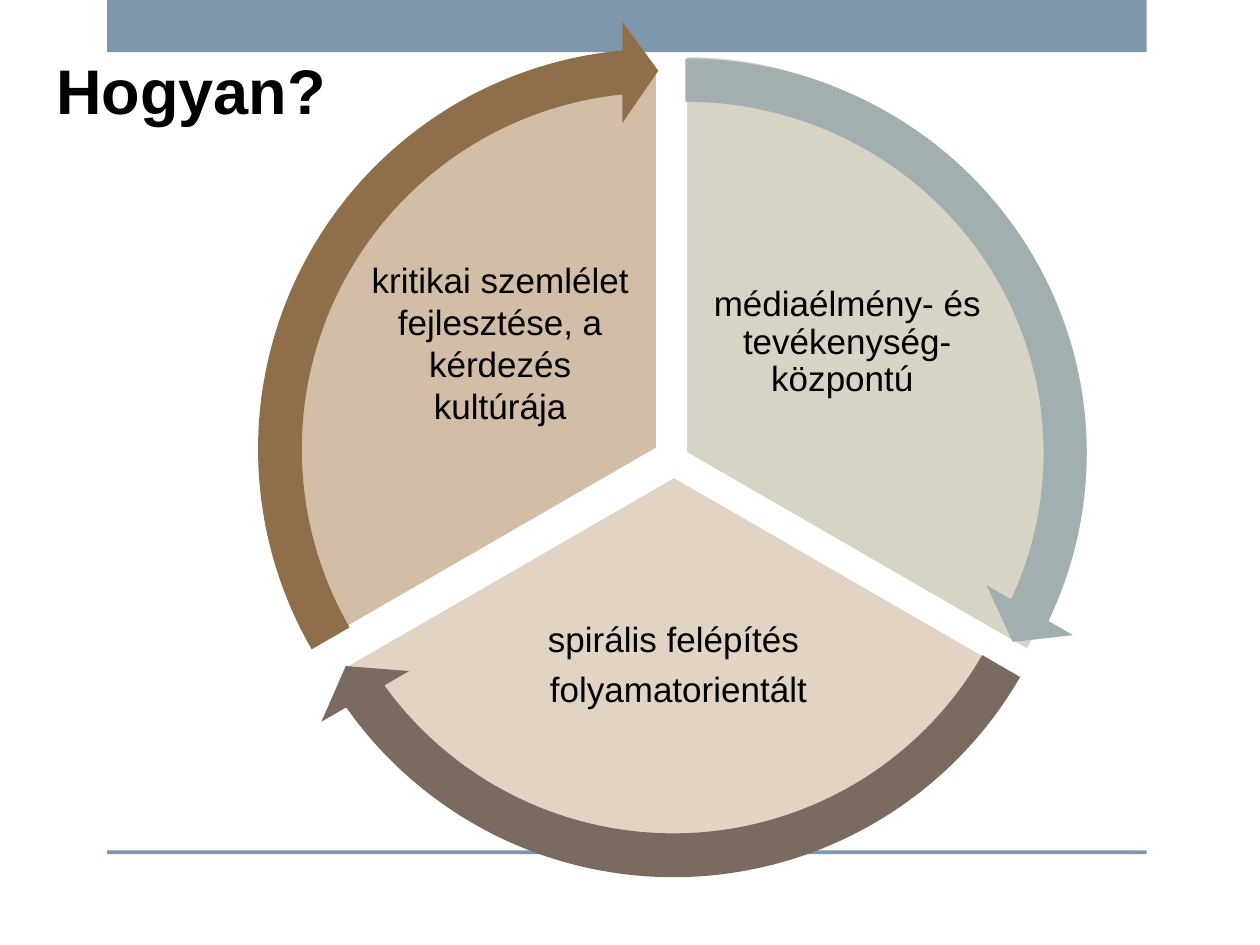
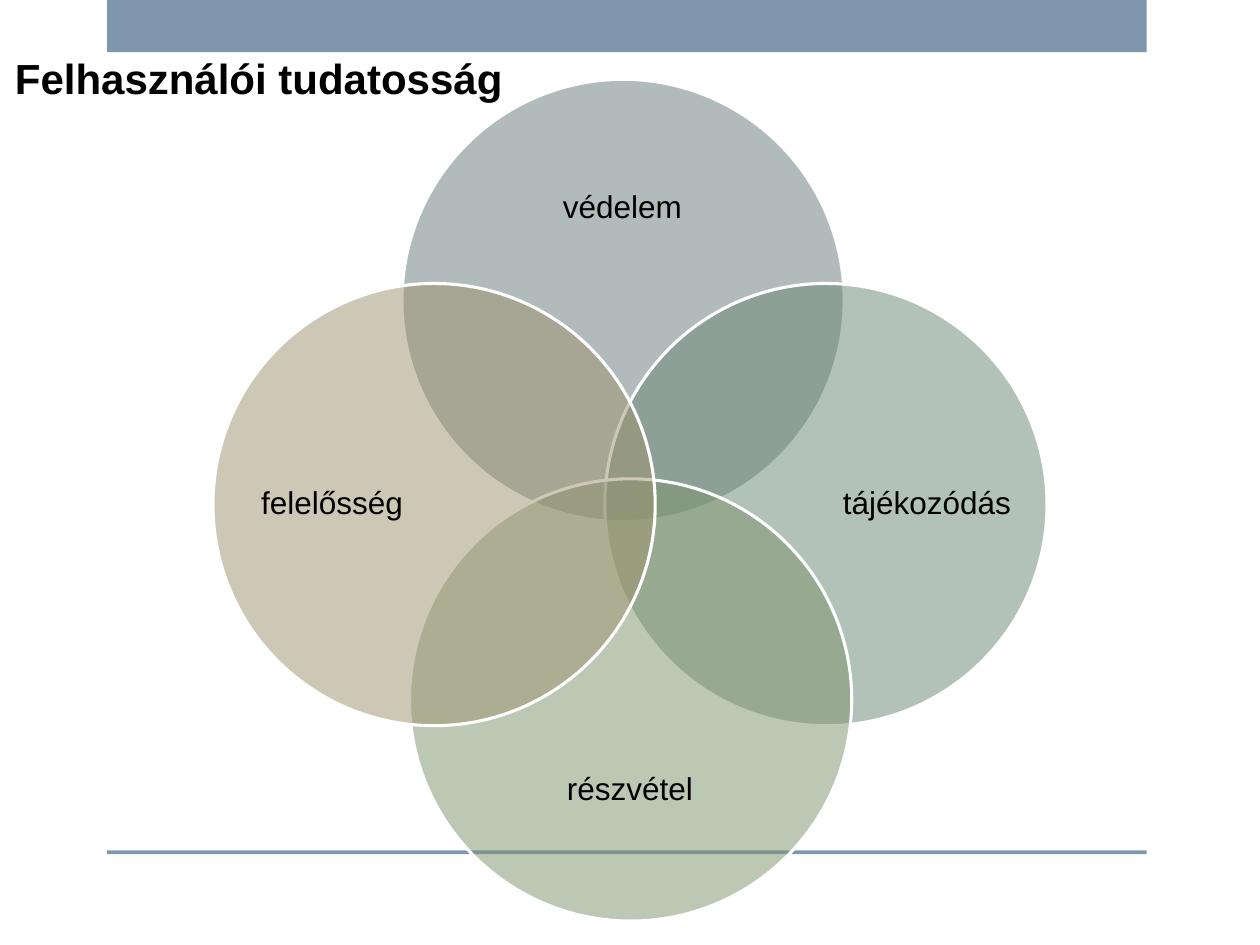
from lxml import etree
from pptx import Presentation
from pptx.dml.color import RGBColor
from pptx.enum.shapes import MSO_SHAPE
from pptx.enum.text import MSO_ANCHOR, MSO_AUTO_SIZE, PP_ALIGN
from pptx.oxml.ns import qn
from pptx.util import Inches, Pt

RECT, PIE = MSO_SHAPE.RECTANGLE, MSO_SHAPE.PIE
OVAL, ARC_ARROW = MSO_SHAPE.OVAL, MSO_SHAPE.CIRCULAR_ARROW
LEFT, CENTER = PP_ALIGN.LEFT, PP_ALIGN.CENTER
MIDDLE, TOP = MSO_ANCHOR.MIDDLE, MSO_ANCHOR.TOP
FIT_SHAPE = MSO_AUTO_SIZE.SHAPE_TO_FIT_TEXT

BLACK = RGBColor(0x00, 0x00, 0x00)
WHITE = RGBColor(0xFF, 0xFF, 0xFF)
BAND_BLUE = RGBColor(0x7E, 0x97, 0xAD)
SAND = RGBColor(0xD8, 0xD4, 0xC5)
BLUSH = RGBColor(0xE1, 0xD4, 0xC5)
TAN = RGBColor(0xD2, 0xBE, 0xA7)
MIST = RGBColor(0xA2, 0xAF, 0xB1)
UMBER = RGBColor(0x7A, 0x6A, 0x60)
BRONZE = RGBColor(0x8F, 0x6F, 0x4A)
SLATE = RGBColor(0x67, 0x78, 0x7B)
SAGE = RGBColor(0x69, 0x87, 0x74)
MOSS = RGBColor(0x7C, 0x93, 0x6B)
KHAKI = RGBColor(0x9D, 0x93, 0x6F)

FONT = "Arial"
CELL = Inches(0.1)  # the slide is a grid of 100 columns by 75 rows
COLUMNS, ROWS = 100, 75
DEGREE = 0.6        # angle adjustment per degree
ARROW_BAND, ARROW_HEAD, ARROW_FLARE = 0.051, 3.275, 0.059
CIRCLE = 35.1


def set_all(target, values):
    for name, value in values.items():
        setattr(target, name, value)


class Deck:
    def __init__(self):
        self.presentation = Presentation()
        set_all(self.presentation, {"slide_width": CELL * COLUMNS,
                                    "slide_height": CELL * ROWS})
        self.slide = None

    @staticmethod
    def cells(area):
        return [round(CELL * length) for length in area]

    def new_slide(self):
        """Start a slide with the shared top band and bottom rule."""
        layout = self.presentation.slide_layouts[6]
        self.slide = self.presentation.slides.add_slide(layout)
        self.shape(RECT, (8.5, 0, 82.5, 4.15), BAND_BLUE)
        self.shape(RECT, (8.5, 67.5, 82.5, 0.3), BAND_BLUE)

    def shape(self, kind, area, fill, outlined=False, alpha=None, adjust=()):
        shape = self.slide.shapes.add_shape(kind, *self.cells(area))
        shape.shadow.inherit = False
        for index, value in enumerate(adjust):
            shape.adjustments[index] = value
        shape.fill.solid()
        shape.fill.fore_color.rgb = fill
        if alpha is not None:
            color = shape.fill._xPr.find(qn("a:solidFill"))[0]
            etree.SubElement(color, qn("a:alpha")).set("val", str(alpha * 1000))
        if outlined:
            shape.line.color.rgb = WHITE
            shape.line.width = Pt(1.75)
        else:
            shape.line.fill.background()

    def text(self, area, paragraphs, size, frame_format, paragraph_format,
             bold=False):
        frame = self.slide.shapes.add_textbox(*self.cells(area)).text_frame
        set_all(frame, frame_format)
        for index, wording in enumerate(paragraphs):
            paragraph = frame.add_paragraph() if index else frame.paragraphs[0]
            set_all(paragraph, paragraph_format)
            run = paragraph.add_run()
            run.text = wording
            set_all(run.font, {"name": FONT, "size": Pt(size), "bold": bold})
            run.font.color.rgb = BLACK

    def title(self, area, wording, size):
        self.text(area, [wording], size,
                  {"word_wrap": False, "auto_size": FIT_SHAPE,
                   "vertical_anchor": TOP},
                  {"alignment": LEFT}, bold=True)

    def label(self, area, paragraphs, size, inset=0, align=CENTER, tight=True):
        margin = Inches(inset)
        frame_format = {f"margin_{side}": margin
                        for side in ("left", "top", "right", "bottom")}
        frame_format.update(word_wrap=True, vertical_anchor=MIDDLE)
        paragraph_format = {"alignment": align}
        if tight:
            paragraph_format.update(line_spacing=0.9,
                                    space_after=Pt(size * 0.35))
        self.text(area, paragraphs, size, frame_format, paragraph_format)

    def sector(self, area, start, end, fill):
        self.shape(PIE, area, fill, outlined=True,
                   adjust=(start * DEGREE, end * DEGREE))

    def arc_arrow(self, area, start, end, fill):
        """Draw an arrow whose tip stops at the end angle of its sector."""
        self.shape(ARC_ARROW, area, fill,
                   adjust=(ARROW_BAND, ARROW_HEAD, end * DEGREE - ARROW_HEAD,
                           start * DEGREE, ARROW_FLARE))


def build_method_cycle(deck):
    deck.new_slide()
    # start and end angle, sector, sector fill, arrow, arrow fill
    steps = [
        (270, 30, (23.1, 4.4, 62.6, 63.1), SAND, (20.3, 2.4, 68.2, 67.1), MIST),
        (30, 150, (23.2, 7.5, 60.6, 60.6), BLUSH, (19.4, 3.8, 68.1, 68.1), UMBER),
        (150, 270, (21.9, 5.3, 60.6, 60.6), TAN, (18.2, 1.6, 68.1, 68.1), BRONZE),
    ]
    labels = [
        ((56.1, 17.8, 22.3, 18.8), ["médiaélmény- és tevékenység-központú "], True),
        ((37.6, 46.8, 32.5, 12.1), ["spirális felépítés ", "folyamatorientált"], True),
        ((28.9, 18.2, 21.6, 18),
         ["kritikai szemlélet fejlesztése, a kérdezés kultúrája"], False),
    ]
    for (start, end, area, fill, *_), (place, wording, tight) in zip(steps, labels):
        deck.sector(area, start, end, fill)
        deck.label(place, wording, 20, inset=0.03, tight=tight)
    for start, end, _, _, area, fill in steps:
        deck.arc_arrow(area, start, end, fill)
    deck.title((3.5, 3.6, 25, 7.1), "Hogyan?", 36)


def build_awareness_circles(deck):
    deck.new_slide()
    wide, tall = (27, 11.1), (13.5, 27)
    themes = [
        ("védelem", (31.9, 6.3), SLATE, (35.9, 11), wide, CENTER),
        ("tájékozódás", (48, 22.5), SAGE, (66.9, 26.5), tall, LEFT),
        ("részvétel", (32.5, 38), MOSS, (36.5, 57.2), wide, CENTER),
        ("felelősség", (16.9, 22.5), KHAKI, (19.6, 26.5), tall, CENTER),
    ]
    for theme, corner, fill, label_corner, label_size, align in themes:
        deck.shape(OVAL, (*corner, CIRCLE, CIRCLE), fill, outlined=True, alpha=50)
        deck.label((*label_corner, *label_size), [theme], 18, align=align)
    deck.title((0.2, 3.7, 42, 5), "Felhasználói tudatosság", 24)


def main():
    deck = Deck()
    build_method_cycle(deck)
    build_awareness_circles(deck)
    deck.presentation.save("out.pptx")


if __name__ == "__main__":
    main()
